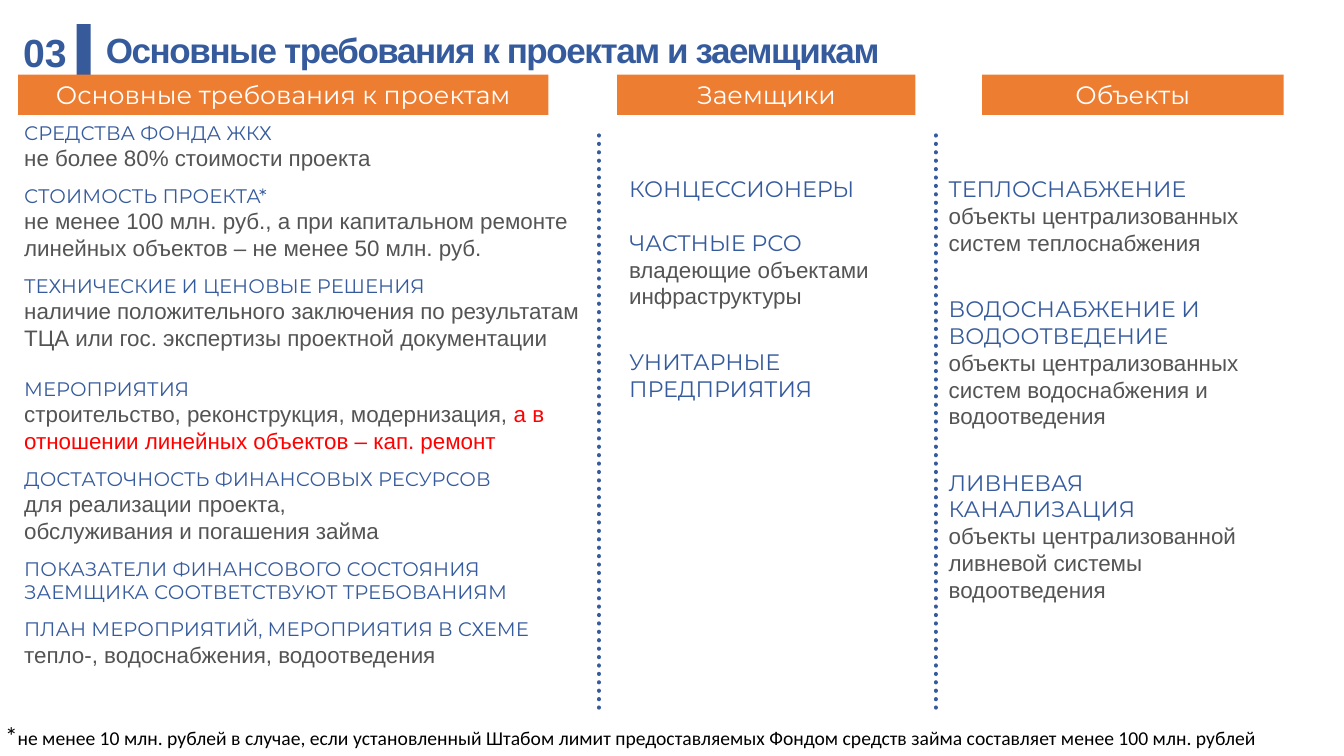
from dataclasses import dataclass

from lxml import etree
from pptx import Presentation
from pptx.dml.color import RGBColor
from pptx.enum import dml, shapes, text
from pptx.oxml import ns
from pptx import util as u

PX = 9144  # 100 px to the inch
NAVY = RGBColor(0x36, 0x5B, 0x9D)
BLUE = RGBColor(0x37, 0x5A, 0x9B)
ORANGE = RGBColor(0xED, 0x7D, 0x31)
GRAY = RGBColor(0x54, 0x54, 0x54)
RED = RGBColor(0xFF, 0, 0)
WHITE = RGBColor(0xFF, 0xFF, 0xFF)
BLACK = RGBColor(0, 0, 0)

HEAD = dict(size=16, name="Montserrat", color=NAVY)
SMALL = HEAD | dict(size=14)
BODY = dict(size=16, name="Arial", color=GRAY)
ALERT = BODY | dict(color=RED)
LABEL = dict(size=18, name="Montserrat", color=WHITE)
TITLE = dict(size=25, name="Arial", color=NAVY, bold=True)
NUMBER = TITLE | dict(size=28)
STAR = dict(size=18, name="Calibri", color=BLACK)
NOTE = STAR | dict(size=14)


@dataclass
class Box:
    x: int
    y: int
    w: int
    h: int

    def emu(self) -> list[int]:
        return [v * PX for v in (self.x, self.y, self.w, self.h)]


@dataclass
class Para:
    runs: list[tuple[str, dict]]
    gap: float = 0  # points before


@dataclass
class Item:
    head: str
    body: tuple = ()
    gap: float = 0


def style(font, look: dict) -> None:
    for key, val in look.items():
        if key == "color":
            font.color.rgb = val
        else:
            setattr(font, key, u.Pt(val) if key == "size" else val)


def write(frame, paras: list[Para], wrap=True, align=text.PP_ALIGN.LEFT,
          anchor=text.MSO_ANCHOR.TOP) -> None:
    look = dict(word_wrap=wrap, vertical_anchor=anchor, auto_size=text.MSO_AUTO_SIZE.NONE)
    look |= {f"margin_{side}": 5 * PX for side in ("left", "top", "right", "bottom")}
    for key, val in look.items():
        setattr(frame, key, val)
    for i, para in enumerate(paras):
        p = frame.add_paragraph() if i else frame.paragraphs[0]
        p.alignment = align
        p.space_before = u.Pt(para.gap)
        for words, font in para.runs:
            run = p.add_run()
            run.text = words
            style(run.font, font)


def label(slide, box: Box, paras: list[Para], **opts) -> None:
    write(slide.shapes.add_textbox(*box.emu()).text_frame, paras, **opts)


def listing(slide, box: Box, items: list[Item], head: dict) -> None:
    paras = []
    for item in items:
        paras.append(Para([(item.head, head)], item.gap))
        for part in item.body:
            paras.append(Para([(part, BODY)] if isinstance(part, str) else part))
    label(slide, box, paras)


def header(slide, box: Box, words: str) -> None:
    bar = slide.shapes.add_shape(shapes.MSO_SHAPE.RECTANGLE, *box.emu())
    bar.shadow.inherit = False
    bar.fill.solid()
    bar.fill.fore_color.rgb = ORANGE
    bar.line.fill.background()
    write(bar.text_frame, [Para([(words, LABEL)])], align=text.PP_ALIGN.CENTER)


def dots(slide, x: int, top: int, end: int) -> None:
    rule = slide.shapes.add_connector(
        shapes.MSO_CONNECTOR.STRAIGHT, x * PX, end * PX, x * PX, top * PX)
    rule.line.color.rgb = NAVY
    rule.line.width = u.Pt(3)
    rule.line.dash_style = dml.MSO_LINE.ROUND_DOT
    rule.line._get_or_add_ln().set("cap", "rnd")
    etree.SubElement(rule._element.spPr, ns.qn("a:effectLst"))


def mark(slide) -> None:
    form = slide.shapes.build_freeform(76, 24, scale=PX)
    form.add_line_segments([(90, 24), (90, 75), (76, 80)], close=True)
    bar = form.convert_to_shape()
    bar.shadow.inherit = False
    bar.fill.solid()
    bar.fill.fore_color.rgb = BLUE
    bar.line.fill.background()


HEADERS = [
    (Box(18, 74, 526, 40), "Основные требования к проектам"),
    (Box(612, 74, 296, 40), "Заемщики"),
    (Box(974, 74, 299, 40), "Объекты"),
]
TERMS = [
    Item("СРЕДСТВА ФОНДА ЖКХ", ("не более 80% стоимости проекта",)),
    Item("СТОИМОСТЬ ПРОЕКТА*",
         ("не менее 100 млн. руб., а при капитальном ремонте "
          "линейных объектов – не менее 50 млн. руб.",), 9),
    Item("ТЕХНИЧЕСКИЕ И ЦЕНОВЫЕ РЕШЕНИЯ",
         ("наличие положительного заключения по результатам "
          "ТЦА или гос. экспертизы проектной документации",), 9),
    Item("МЕРОПРИЯТИЯ",
         ([("строительство, реконструкция, модернизация, ", BODY),
           ("а в отношении линейных объектов – кап. ремонт", ALERT)],), 18.5),
    Item("ДОСТАТОЧНОСТЬ ФИНАНСОВЫХ РЕСУРСОВ",
         ("для реализации проекта,", "обслуживания и погашения займа"), 9),
    Item("ПОКАЗАТЕЛИ ФИНАНСОВОГО СОСТОЯНИЯ ЗАЕМЩИКА СООТВЕТСТВУЮТ ТРЕБОВАНИЯМ", (), 9),
    Item("ПЛАН МЕРОПРИЯТИЙ, МЕРОПРИЯТИЯ В СХЕМЕ",
         ("тепло-, водоснабжения, водоотведения",), 9.5),
]
DEBTORS = [
    Item("КОНЦЕССИОНЕРЫ"),
    Item("ЧАСТНЫЕ РСО", ("владеющие объектами инфраструктуры",), 19),
    Item("УНИТАРНЫЕ ПРЕДПРИЯТИЯ", (), 28),
]
OBJECTS = [
    Item("ТЕПЛОСНАБЖЕНИЕ", ("объекты централизованных систем теплоснабжения",)),
    Item("ВОДОСНАБЖЕНИЕ И ВОДООТВЕДЕНИЕ",
         ("объекты централизованных систем водоснабжения и водоотведения",), 28),
    Item("ЛИВНЕВАЯ КАНАЛИЗАЦИЯ",
         ("объекты централизованной ливневой системы водоотведения",), 28),
]
COLUMNS = [
    (Box(19, 115, 561, 589), TERMS, SMALL),
    (Box(619, 169, 264, 421), DEBTORS, HEAD),
    (Box(936, 169, 313, 441), OBJECTS, HEAD),
]


def main() -> None:
    deck = Presentation()
    deck.slide_width, deck.slide_height = 1333 * PX, 750 * PX
    slide = deck.slides.add_slide(deck.slide_layouts[5])

    # Title row
    mark(slide)
    label(slide, Box(18, 23, 54, 57), [Para([("03", NUMBER)])],
          wrap=False, anchor=text.MSO_ANCHOR.MIDDLE)
    title = slide.shapes.title
    title.left, title.top, title.width, title.height = Box(100, 28, 1150, 48).emu()
    write(title.text_frame, [Para([("Основные требования к проектам и заемщикам", TITLE)])],
          anchor=text.MSO_ANCHOR.MIDDLE)
    line = title.text_frame.paragraphs[0]
    line.line_spacing = 0.9
    line.runs[0].font._element.set("spc", "-100")

    # Columns with dotted rules between them
    for box, words in HEADERS:
        header(slide, box, words)
    for box, items, head in COLUMNS:
        listing(slide, box, items, head)
    for x in (594, 928):
        dots(slide, x, 131, 702)

    # Footnote
    label(slide, Box(0, 710, 1280, 40), [Para([
        ("*", STAR),
        ("не менее 10 млн. рублей в случае, если установленный Штабом лимит предоставляемых "
         "Фондом средств займа составляет менее 100 млн. рублей", NOTE)])])

    deck.save("out.pptx")


if __name__ == "__main__":
    main()
